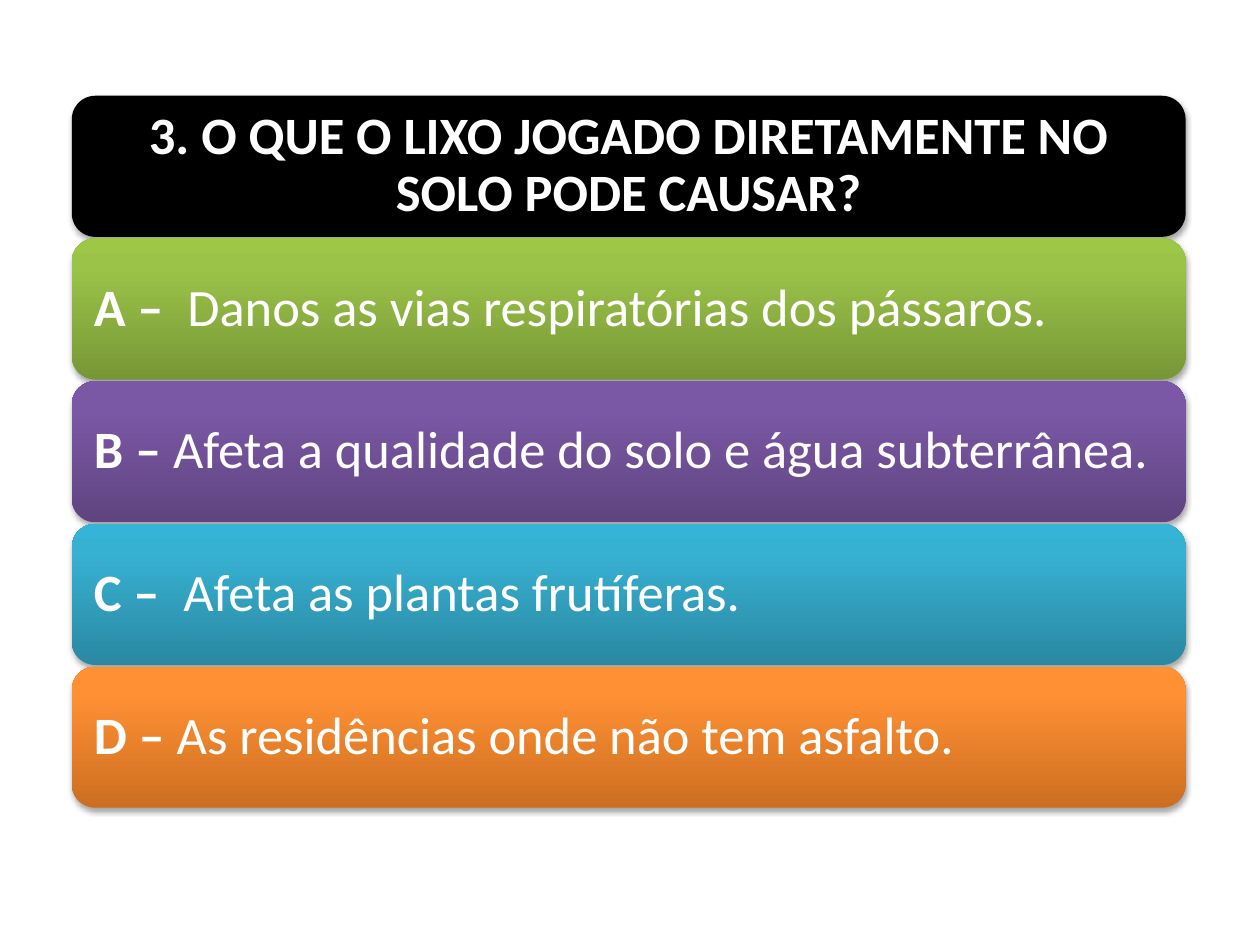
import copy
from dataclasses import dataclass

import pptx
import pptx.dml.color
import pptx.enum.shapes
import pptx.enum.text
import pptx.oxml
import pptx.util
from pptx.util import Inches


@dataclass(frozen=True)
class Theme:
    font: str = "Calibri"
    size: int = 30
    text: str = "FFFFFF"
    question: str = "000000"
    # Gradient colours from the bottom of a bar to its top
    green: tuple = ("779737", "9BC348", "9DC746")
    purple: tuple = ("5F4480", "7B58A6", "7C57A8")
    blue: tuple = ("2A88A2", "37B1D2", "34B4D6")
    orange: tuple = ("CC6E20", "FF9034", "FF9136")


theme = Theme()
rgb = pptx.dml.color.RGBColor.from_string
align = pptx.enum.text.PP_ALIGN

BAR_LEFT, BAR_WIDTH, BAR_HEIGHT = 0.57, 8.84, 1.12
FIRST_TOP, LAST_TOP = 0.76, 5.29
TEXT_INSET = 0.05

SHADOW = (
    '<a:effectLst xmlns:a="http://schemas.openxmlformats.org/drawingml/2006/main">'
    '<a:outerShdw blurRad="40000" dist="23000" dir="5400000" rotWithShape="0">'
    '<a:srgbClr val="000000"><a:alpha val="35000"/></a:srgbClr>'
    '</a:outerShdw></a:effectLst>'
)


def add_bar(slide, top):
    bar = slide.shapes.add_shape(
        pptx.enum.shapes.MSO_SHAPE.ROUNDED_RECTANGLE,
        Inches(BAR_LEFT), Inches(top), Inches(BAR_WIDTH), Inches(BAR_HEIGHT))
    bar.line.fill.background()
    bar.element.spPr.append(pptx.oxml.parse_xml(SHADOW))
    return bar


def format_text(shape, alignment, inset):
    frame = shape.text_frame
    frame.word_wrap = True
    frame.auto_size = pptx.enum.text.MSO_AUTO_SIZE.NONE
    frame.vertical_anchor = pptx.enum.text.MSO_ANCHOR.MIDDLE
    frame.margin_left = frame.margin_right = Inches(inset)
    frame.margin_top = frame.margin_bottom = Inches(inset)
    paragraph = frame.paragraphs[0]
    paragraph.alignment = alignment
    paragraph.line_spacing = 0.9
    paragraph.font.name = theme.font
    paragraph.font.size = pptx.util.Pt(theme.size)
    paragraph.font.color.rgb = rgb(theme.text)
    return paragraph


presentation = pptx.Presentation()
presentation.slide_width = Inches(10)
presentation.slide_height = Inches(7.5)
slide = presentation.slides.add_slide(presentation.slide_layouts[5])

# Question: black bar with the title in front of it
question_bar = add_bar(slide, FIRST_TOP)
question_bar.fill.solid()
question_bar.fill.fore_color.rgb = rgb(theme.question)

title = slide.shapes.title
title.left, title.top = Inches(BAR_LEFT + TEXT_INSET), Inches(FIRST_TOP + TEXT_INSET)
title.width = Inches(BAR_WIDTH - 2 * TEXT_INSET)
title.height = Inches(BAR_HEIGHT - 2 * TEXT_INSET)
title.text_frame.text = "3. O QUE O LIXO JOGADO DIRETAMENTE NO SOLO PODE CAUSAR?"
format_text(title, align.CENTER, 0.12).font.bold = True
question_bar.element.addnext(title.element)

# Answers: one gradient bar each, evenly spaced below the question
answers = [
    ("A – ", " Danos as vias respiratórias dos pássaros.", theme.green, align.LEFT),
    ("B – ", "Afeta a qualidade do solo e água subterrânea.", theme.purple, align.JUSTIFY),
    ("C – ", " Afeta as plantas frutíferas.", theme.blue, align.LEFT),
    ("D – ", "As residências onde não tem asfalto.", theme.orange, align.LEFT),
]
pitch = (LAST_TOP - FIRST_TOP) / len(answers)

for number, (letter, answer, colors, alignment) in enumerate(answers, start=1):
    bar = add_bar(slide, FIRST_TOP + number * pitch)

    # Three gradient stops, running upwards
    bar.fill.gradient()
    bar.fill.gradient_angle = 90
    stop_list = bar.element.spPr.find(".//" + pptx.oxml.ns.qn("a:gsLst"))
    stop_list.insert(1, copy.deepcopy(stop_list[0]))
    for stop, position, color in zip(bar.fill.gradient_stops, (0, 0.8, 1), colors):
        stop.position = position
        stop.color.rgb = rgb(color)

    # Bold letter, regular answer
    paragraph = format_text(bar, alignment, 0.12)
    for text, bold in ((letter, True), (answer, False)):
        run = paragraph.add_run()
        run.text = text
        run.font.bold = bold

presentation.save("out.pptx")
